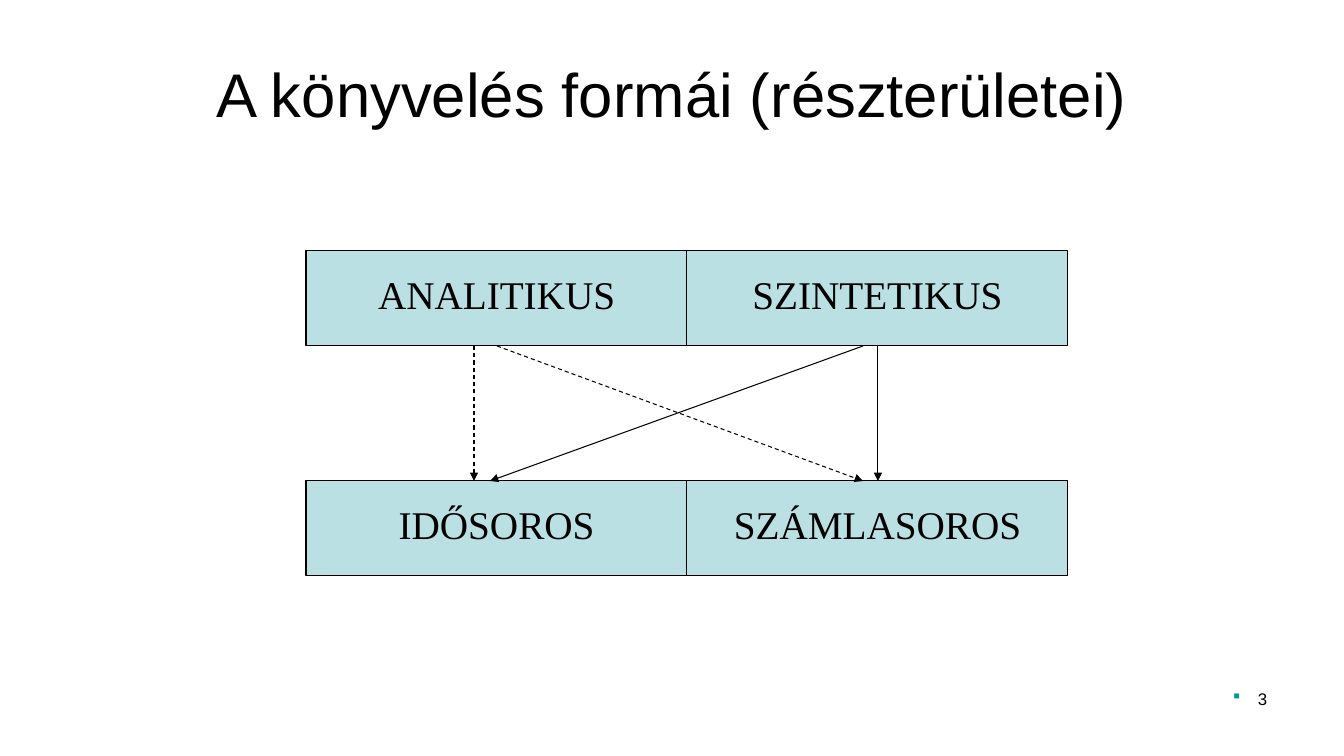
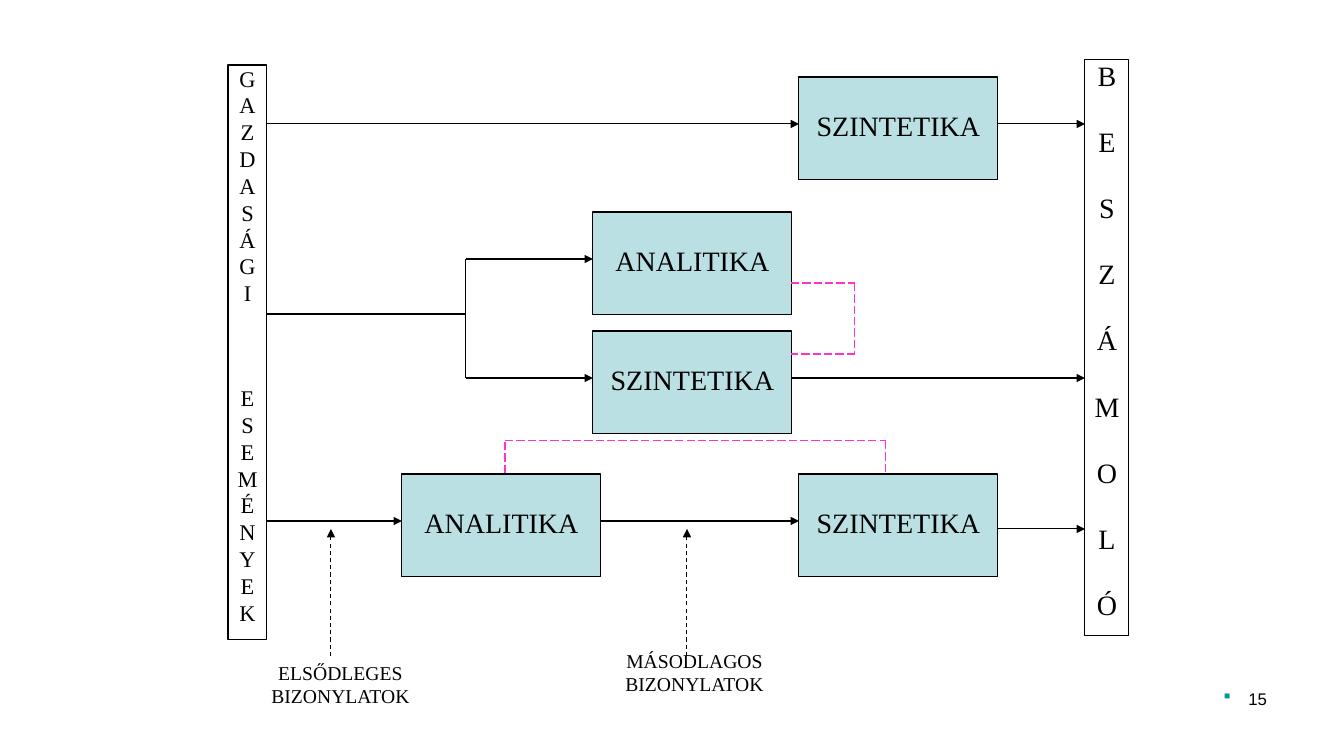
"""Builds two slides on the forms of bookkeeping and the flow from events to report."""
from itertools import pairwise

from lxml import etree
from pptx import Presentation
from pptx import util as u
from pptx.dml.color import RGBColor
from pptx.enum import dml, shapes, text
from pptx.oxml.ns import qn

PX = 12192000 / 1344
COLORS = {"ink": "000000", "box": "BBE0E3", "link": "FF33CC", "bullet": "009999"}
SERIF, SANS = "Times New Roman", "Arial"
DASH = dml.MSO_LINE.DASH
LONG_DASH = dml.MSO_LINE.LONG_DASH
STYLES = {
    "arrow": {"head": True},
    "dashed arrow": {"head": True, "dash": DASH},
    "link": {"color": "link", "dash": LONG_DASH},
}

FORMS_TITLE = "A könyvelés formái (részterületei)"
FORMS = [["ANALITIKUS", "SZINTETIKUS"], ["IDŐSOROS", "SZÁMLASOROS"]]
FORM_LEFT, FORM_TOP, FORM_W, FORM_H, FORM_PITCH = 306, 251, 381, 95, 230
FORM_ROUTES = [
    ("arrow", [(863, 346), (490, 481)]),
    ("arrow", [(878, 346), (878, 481)]),
    ("dashed arrow", [(497, 346), (863, 481)]),
    ("dashed arrow", [(474, 346), (474, 481)]),
]

STAGE_W, STAGE_H = 199, 103
STAGES = [
    ("SZINTETIKA", 799, 77),
    ("ANALITIKA", 593, 212),
    ("SZINTETIKA", 593, 331),
    ("ANALITIKA", 402, 474),
    ("SZINTETIKA", 799, 474),
]
PILLARS = [
    (["GAZDASÁGI", "ESEMÉNYEK"], (228, 65, 39, 575), 16, 3.8, 59.5),
    (["BESZÁMOLÓ"], (1085, 60, 44, 576), 20, 28, 0),
]
VOUCHERS = [
    (["ELSŐDLEGES", "BIZONYLATOK"], (259, 660, 163, 53)),
    (["MÁSODLAGOS", "BIZONYLATOK"], (613, 648, 163, 53)),
]
FLOW_ROUTES = [
    ("arrow", [(267, 124), (799, 124)]),
    ("arrow", [(998, 124), (1085, 124)]),
    ("arrow", [(267, 314), (466, 314), (466, 259), (593, 259)]),
    ("arrow", [(466, 314), (466, 378), (593, 378)]),
    ("arrow", [(791, 378), (1085, 378)]),
    ("arrow", [(267, 521), (402, 521)]),
    ("arrow", [(601, 521), (799, 521)]),
    ("arrow", [(998, 529), (1085, 529)]),
    ("dashed arrow", [(331, 656), (331, 529)]),
    ("dashed arrow", [(687, 656), (687, 529)]),
    ("link", [(791, 283), (855, 283), (855, 354), (791, 354)]),
    ("link", [(505, 473), (505, 441), (886, 441), (886, 473)]),
]


def emu(*lengths):
    return [u.Emu(round(length * PX)) for length in lengths]


def rgb(name):
    return RGBColor.from_string(COLORS[name])


def write(frame, lines, size, font=SERIF, align=text.PP_ALIGN.CENTER,
          anchor=text.MSO_ANCHOR.MIDDLE, wrap=False, spacing=0.8, gaps=None):
    frame.word_wrap = wrap
    frame.vertical_anchor = anchor
    gaps = gaps or [0] + [0.24 * size] * (len(lines) - 1)
    for index, (line, gap) in enumerate(zip(lines, gaps)):
        paragraph = frame.add_paragraph() if index else frame.paragraphs[0]
        paragraph.alignment = align
        paragraph.line_spacing = spacing
        paragraph.space_before = u.Pt(gap)
        run = paragraph.add_run()
        run.text = line
        run.font.size = u.Pt(size)
        run.font.name = font
        run.font.color.rgb = rgb("ink")


def add_box(slide, lines, at, size, fill="box", **fmt):
    box = slide.shapes.add_shape(shapes.MSO_SHAPE.RECTANGLE, *emu(*at))
    box.shadow.inherit = False
    if fill:
        box.fill.solid()
        box.fill.fore_color.rgb = rgb(fill)
    else:
        box.fill.background()
    box.line.color.rgb = rgb("ink")
    box.line.width = u.Pt(0.75)
    write(box.text_frame, lines, size, **fmt)


def add_label(slide, lines, at, size, **fmt):
    label = slide.shapes.add_textbox(*emu(*at))
    write(label.text_frame, lines, size, anchor=text.MSO_ANCHOR.TOP, **fmt)
    return label


def add_pillar(slide, words, at, size, letter_gap, word_gap):
    gaps = [letter_gap if i else word_gap for word in words for i in range(len(word))]
    gaps[0] = 0
    add_box(slide, list("".join(words)), at, size, fill=None,
            anchor=text.MSO_ANCHOR.TOP, gaps=gaps)


def add_route(slide, points, color="ink", dash=None, head=False):
    for start, end in pairwise(points):
        segment = slide.shapes.add_connector(
            shapes.MSO_CONNECTOR.STRAIGHT, *emu(*start, *end))
        segment.line.color.rgb = rgb(color)
        segment.line.width = u.Pt(0.75)
        if dash:
            segment.line.dash_style = dash
        if head and end == points[-1]:
            etree.SubElement(segment.line._get_or_add_ln(), qn("a:tailEnd"), type="triangle")
        etree.SubElement(segment._element.spPr, qn("a:effectLst"))


def add_number(slide, number):
    label = add_label(slide, [number], (964, 688, 313, 52), 12, font=SANS,
                      align=text.PP_ALIGN.RIGHT, wrap=True)
    props = label.text_frame.paragraphs[0]._p.get_or_add_pPr()
    indent, = emu(25)
    props.set("marL", str(indent))
    props.set("indent", str(-indent))
    tint = etree.SubElement(props, qn("a:buClr"))
    etree.SubElement(tint, qn("a:srgbClr"), val=COLORS["bullet"])
    etree.SubElement(props, qn("a:buFont"), typeface="Wingdings")
    etree.SubElement(props, qn("a:buChar"), char="§")


def add_routes(slide, routes):
    for style, points in routes:
        add_route(slide, points, **STYLES[style])


def build_forms(deck):
    slide = deck.slides.add_slide(deck.slide_layouts[5])
    title = slide.shapes.title
    title.left, title.top, title.width, title.height = emu(67, 30, 1210, 126)
    write(title.text_frame, [FORMS_TITLE], 44, font=SANS, wrap=True, spacing=1.0)
    add_number(slide, "3")
    for row, names in enumerate(FORMS):
        for column, name in enumerate(names):
            at = (FORM_LEFT + column * FORM_W, FORM_TOP + row * FORM_PITCH, FORM_W, FORM_H)
            add_box(slide, [name], at, 28)
    add_routes(slide, FORM_ROUTES)


def build_flow(deck):
    slide = deck.slides.add_slide(deck.slide_layouts[6])
    add_number(slide, "15")
    for pillar in PILLARS:
        add_pillar(slide, *pillar)
    for name, left, top in STAGES:
        add_box(slide, [name], (left, top, STAGE_W, STAGE_H), 20)
    for lines, at in VOUCHERS:
        add_label(slide, lines, at, 14)
    add_routes(slide, FLOW_ROUTES)


def main():
    deck = Presentation()
    deck.slide_width, deck.slide_height = emu(1344, 756)
    build_forms(deck)
    build_flow(deck)
    deck.save("out.pptx")


if __name__ == "__main__":
    main()
